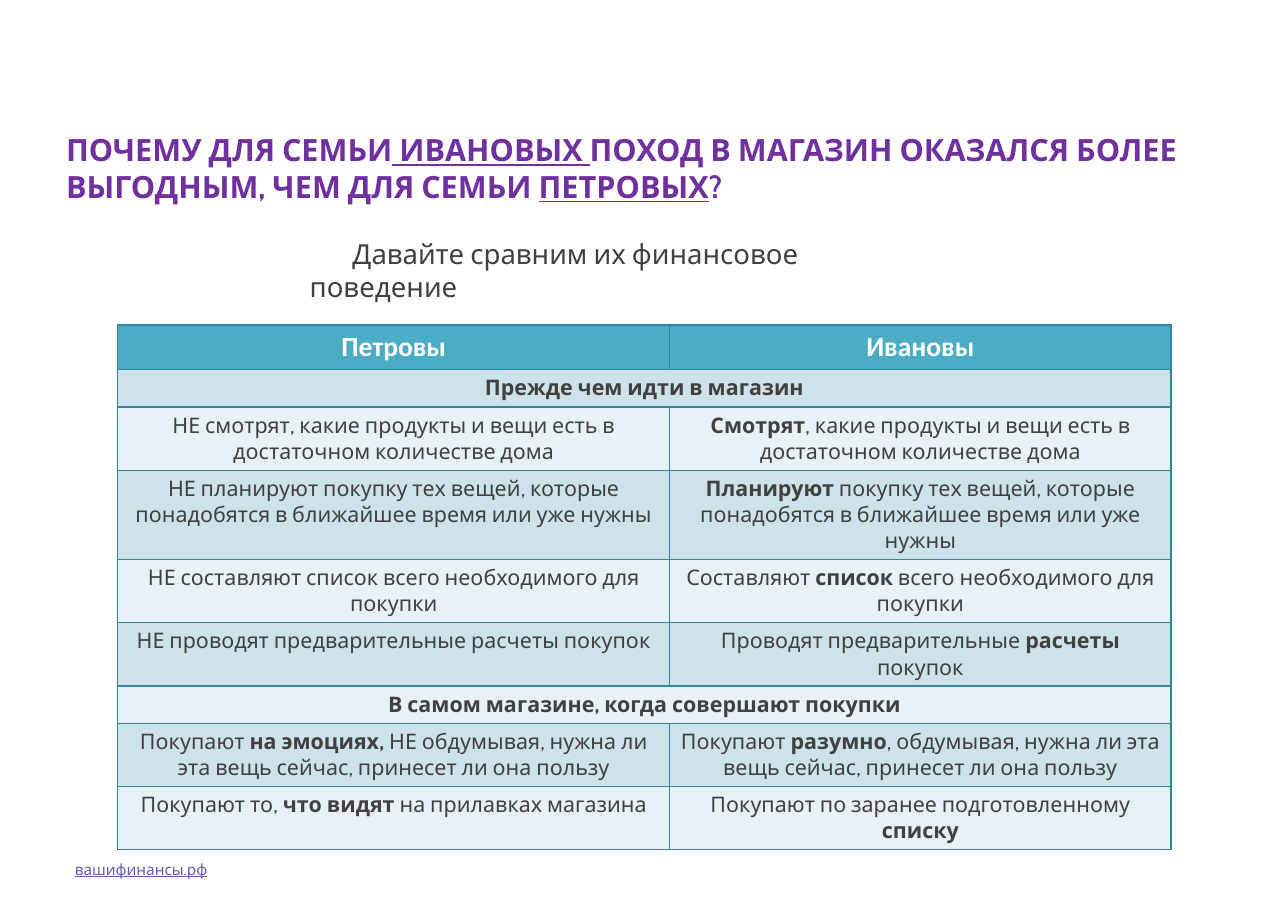
from dataclasses import dataclass

from lxml.etree import SubElement
from pptx import Presentation
from pptx.dml.color import RGBColor as RGB
from pptx.enum.text import MSO_ANCHOR as Anchor, MSO_AUTO_SIZE as AutoSize, PP_ALIGN as Align
from pptx.oxml.ns import qn
from pptx.util import Pt

# Content: * switches bold, _ switches underline
TITLE = ("ПОЧЕМУ ДЛЯ СЕМЬИ_ ИВАНОВЫХ _ПОХОД В МАГАЗИН ОКАЗАЛСЯ БОЛЕЕ ВЫГОДНЫМ, "
         "ЧЕМ ДЛЯ СЕМЬИ _ПЕТРОВЫХ_?")
SUBTITLE = "Давайте сравним их финансовое поведение"
SITE = "_вашифинансы.рф_"
HEADER = ("Петровы", "Ивановы")
# A row with one text spans both columns
ROWS = [
    ("*Прежде чем идти в магазин*",),
    ("НЕ смотрят, какие продукты и вещи есть в достаточном количестве дома",
     "*Смотрят*, какие продукты и вещи есть в достаточном количестве дома"),
    ("НЕ планируют покупку тех вещей, которые понадобятся в ближайшее время или уже нужны",
     "*Планируют* покупку тех вещей, которые понадобятся в ближайшее время или уже нужны"),
    ("НЕ составляют список всего необходимого для покупки",
     "Составляют *список* всего необходимого для покупки"),
    ("НЕ проводят предварительные расчеты покупок",
     "Проводят предварительные *расчеты* покупок"),
    ("*В самом магазине, когда совершают покупки*",),
    ("Покупают *на эмоциях,* НЕ обдумывая, нужна ли эта вещь сейчас, принесет ли она пользу",
     "Покупают *разумно*, обдумывая, нужна ли эта вещь сейчас, принесет ли она пользу"),
    ("Покупают то, *что видят* на прилавках магазина",
     "Покупают по заранее подготовленному *списку*"),
]

# Lengths in points
SLIDE_SIZE = (841.68, 595.44)
TITLE_BOX = (39.6, 82.1, 791.3, 90)
SUBTITLE_BOX = (198.7, 151.2, 418.3, 35.3)
SITE_BOX = (41, 552.2, 285.8, 31.7)
TABLE_BOX = (77, 212.4, 688.3, 321.1)
COLUMN_WIDTHS = (360.7, 327.6)
ROW_HEIGHTS = (24.5, 24.5, 41, 58.3, 41, 24.5, 24.5, 41, 38.9)
FIRST_LINE_INDENT = 28
BORDER_WIDTH = 0.96
INSET = 3.6


@dataclass(frozen=True)
class Theme:
    font: str = "Cabin"
    header_font: str = "Calibri"
    title: str = "7030A0"
    text: str = "404040"
    site: str = "685BB6"
    white: str = "FFFFFF"
    header_fill: str = "4BACC6"
    bands: tuple = ("CEE2EA", "E8F1F5")
    border: str = "31859C"
    title_size: float = 20
    subtitle_size: float = 18
    header_size: float = 18
    cell_size: float = 14
    site_size: float = 10


THEME = Theme()


def write(paragraph, text, size, color, font=THEME.font, bold=False, mark="*"):
    """Fill a paragraph with runs; every second part gets the marked style."""
    for index, part in enumerate(text.split(mark)):
        if not part:
            continue
        run = paragraph.add_run()
        run.text = part
        marked = index % 2 == 1
        run.font.name, run.font.size = font, Pt(size)
        run.font.color.rgb = RGB.from_string(color)
        run.font.bold = bold or (marked and mark == "*")
        run.font.underline = marked and mark == "_"


def place(shape, box, inset, anchor):
    shape.left, shape.top, shape.width, shape.height = map(Pt, box)
    frame = shape.text_frame
    frame.word_wrap, frame.auto_size = True, AutoSize.NONE
    frame.vertical_anchor = anchor
    frame.margin_left = frame.margin_right = Pt(inset)
    frame.margin_top = frame.margin_bottom = Pt(INSET)
    paragraph = frame.paragraphs[0]
    paragraph.alignment = Align.LEFT
    paragraph.space_before = Pt(0)
    return paragraph


def style_cell(cell, text, fill, **text_style):
    cell.margin_left = cell.margin_right = cell.margin_top = cell.margin_bottom = Pt(INSET)
    properties = cell._tc.get_or_add_tcPr()
    for side in ("a:lnL", "a:lnR", "a:lnT", "a:lnB"):
        line = SubElement(properties, qn(side), w=str(Pt(BORDER_WIDTH)))
        line_fill = SubElement(line, qn("a:solidFill"))
        SubElement(line_fill, qn("a:srgbClr"), val=THEME.border)
    cell.fill.solid()
    cell.fill.fore_color.rgb = RGB.from_string(fill)
    paragraph = cell.text_frame.paragraphs[0]
    paragraph.alignment = Align.CENTER
    write(paragraph, text, **text_style)


def add_comparison(slide):
    table = slide.shapes.add_table(len(ROWS) + 1, len(HEADER), *map(Pt, TABLE_BOX)).table
    table.first_row = table.horz_banding = False
    for column, width in zip(table.columns, COLUMN_WIDTHS):
        column.width = Pt(width)
    for row, height in zip(table.rows, ROW_HEIGHTS):
        row.height = Pt(height)

    # Header row
    for column, text in enumerate(HEADER):
        style_cell(table.cell(0, column), text, THEME.header_fill, size=THEME.header_size,
                   color=THEME.white, font=THEME.header_font, bold=True)

    # Banded rows
    for index, texts in enumerate(ROWS):
        row = index + 1
        if len(texts) == 1:
            table.cell(row, 0).merge(table.cell(row, 1))
        for column in range(len(HEADER)):
            text = texts[column] if column < len(texts) else ""
            style_cell(table.cell(row, column), text, THEME.bands[index % 2],
                       size=THEME.cell_size, color=THEME.text)


def main():
    presentation = Presentation()
    presentation.slide_width, presentation.slide_height = map(Pt, SLIDE_SIZE)
    slide = presentation.slides.add_slide(presentation.slide_layouts[1])

    # Site address
    site = slide.shapes.add_textbox(*map(Pt, SITE_BOX))
    write(place(site, SITE_BOX, 7.9, Anchor.MIDDLE), SITE,
          THEME.site_size, THEME.site, mark="_")

    # Title
    write(place(slide.shapes.title, TITLE_BOX, INSET, Anchor.TOP), TITLE,
          THEME.title_size, THEME.title, bold=True, mark="_")

    # Subtitle with an indented first line and no bullet
    paragraph = place(slide.placeholders[1], SUBTITLE_BOX, INSET, Anchor.TOP)
    properties = paragraph._p.get_or_add_pPr()
    properties.set("marL", "0")
    properties.set("indent", str(Pt(FIRST_LINE_INDENT)))
    SubElement(properties, qn("a:buNone"))
    write(paragraph, SUBTITLE, THEME.subtitle_size, THEME.text)

    # Comparison table
    add_comparison(slide)
    presentation.save("out.pptx")


if __name__ == "__main__":
    main()
